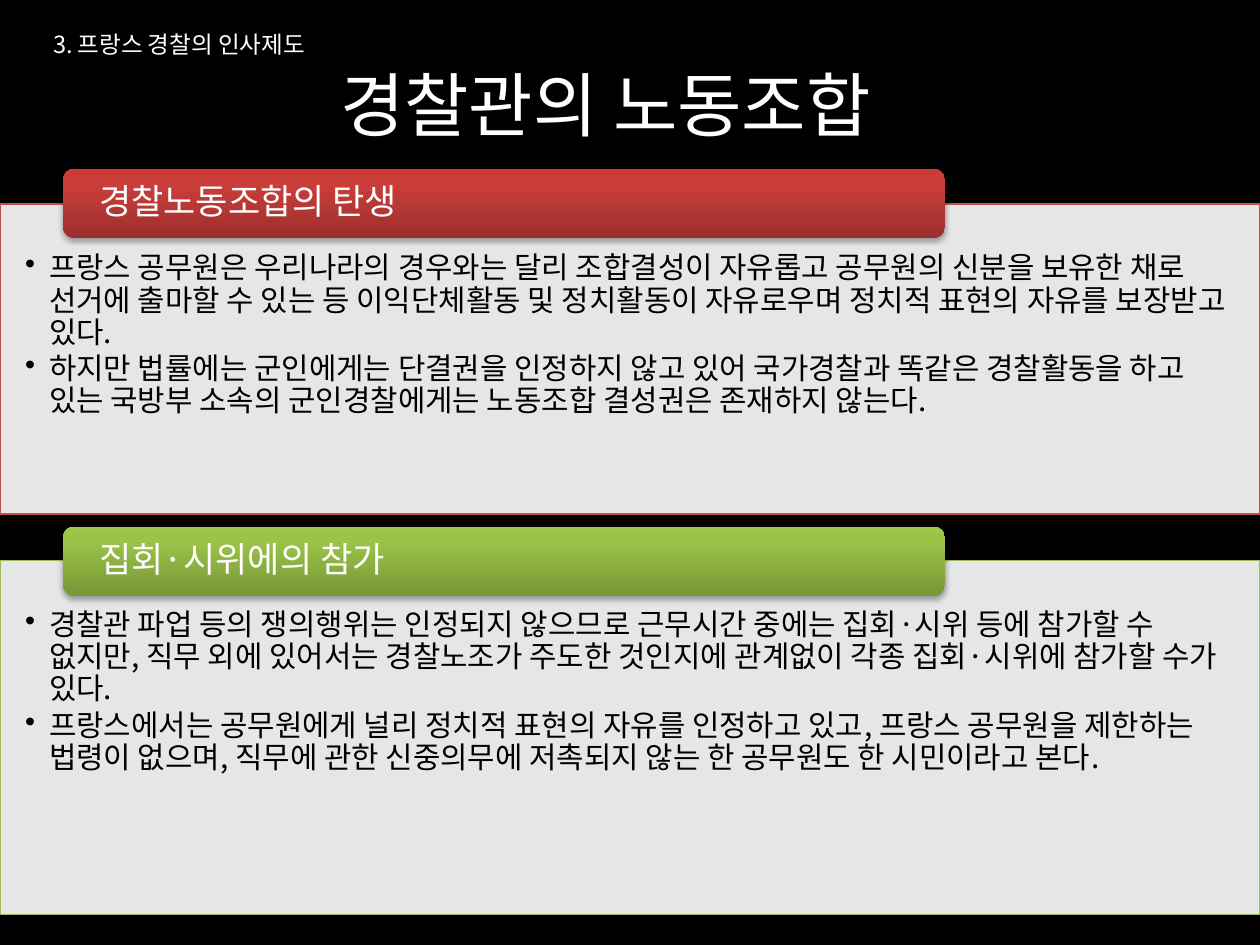
from lxml import etree
from pptx import Presentation
from pptx.dml.color import RGBColor
from pptx.enum.shapes import MSO_SHAPE
from pptx.enum.text import MSO_ANCHOR, PP_ALIGN
from pptx.oxml.ns import qn
from pptx.util import Inches, Pt

RECT, ROUNDED = MSO_SHAPE.RECTANGLE, MSO_SHAPE.ROUNDED_RECTANGLE
TOP, MIDDLE = MSO_ANCHOR.TOP, MSO_ANCHOR.MIDDLE
LEFT, CENTER = PP_ALIGN.LEFT, PP_ALIGN.CENTER
FONT = "Noto Sans CJK KR"
BLACK = RGBColor(0x00, 0x00, 0x00)
WHITE = RGBColor(0xFF, 0xFF, 0xFF)
RED = RGBColor(0xC0, 0x50, 0x4D)
GREEN = RGBColor(0x9B, 0xBB, 0x59)
RED_STOPS = [(0, RGBColor(0x9C, 0x2F, 0x2D)), (80, RGBColor(0xCB, 0x3E, 0x3A)),
             (100, RGBColor(0xCE, 0x3B, 0x37))]
GREEN_STOPS = [(0, RGBColor(0x77, 0x97, 0x37)), (80, RGBColor(0x9B, 0xC3, 0x48)),
               (100, RGBColor(0x9D, 0xC7, 0x46))]


def write(sp, lines, size, color, align, anchor, margins, spacing=0.9, after=0):
    tf = sp.text_frame
    tf.word_wrap = True
    tf.vertical_anchor = anchor
    tf.margin_left = tf.margin_right = Inches(margins[0])
    tf.margin_top, tf.margin_bottom = Inches(margins[1]), Inches(margins[2])
    tf.text = "\n".join(lines)
    for p in tf.paragraphs:
        p.alignment = align
        p.line_spacing = spacing
        p.space_before, p.space_after = Pt(0), Pt(after)
        r = p.runs[0]
        r.font.size, r.font.name = Pt(size), FONT
        r.font.color.rgb = color
        etree.SubElement(r.font._element, qn("a:ea"), typeface=FONT)


def add_shadow(sp):
    sp.shadow.inherit = False
    effects = sp._element.spPr.find(qn("a:effectLst"))
    shadow = etree.SubElement(effects, qn("a:outerShdw"), blurRad="40000", dist="23000",
                              dir="5400000", rotWithShape="0")
    c = etree.SubElement(shadow, qn("a:srgbClr"), val=str(BLACK))
    etree.SubElement(c, qn("a:alpha"), val="35000")


prs = Presentation()
prs.slide_width, prs.slide_height = Inches(10), Inches(7.5)
s = prs.slides.add_slide(prs.slide_layouts[6])
s.background.fill.solid()
s.background.fill.fore_color.rgb = BLACK

# Chapter label and title
chapter = s.shapes.add_textbox(Inches(0.12), Inches(0.21), Inches(2.6), Inches(0.31))
write(chapter, ["3. 프랑스 경찰의 인사제도"], 13.5, WHITE, CENTER, MIDDLE, (0.1, 0.05, 0.05))
title = s.shapes.add_textbox(Inches(0.75), Inches(0.44), Inches(8.11), Inches(0.77))
write(title, ["경찰관의 노동조합"], 40, WHITE, CENTER, TOP, (0.1, 0.05, 0.05), spacing=1)

# Sections: panel top, panel height, header top, colours, heading, bullets
sections = [
    (1.62, 2.46, 1.34, RED, RED_STOPS, "경찰노동조합의 탄생", [
        "프랑스 공무원은 우리나라의 경우와는 달리 조합결성이 자유롭고 공무원의 신분을 보유한 채로 "
        "선거에 출마할 수 있는 등 이익단체활동 및 정치활동이 자유로우며 정치적 표현의 자유를 "
        "보장받고 있다.",
        "하지만 법률에는 군인에게는 단결권을 인정하지 않고 있어 국가경찰과 똑같은 경찰활동을 하고 "
        "있는 국방부 소속의 군인경찰에게는 노동조합 결성권은 존재하지 않는다."]),
    (4.45, 2.81, 4.18, GREEN, GREEN_STOPS, "집회·시위에의 참가", [
        "경찰관 파업 등의 쟁의행위는 인정되지 않으므로 근무시간 중에는 집회·시위 등에 참가할 수 "
        "없지만, 직무 외에 있어서는 경찰노조가 주도한 것인지에 관계없이 각종 집회·시위에 참가할 "
        "수가 있다.",
        "프랑스에서는 공무원에게 널리 정치적 표현의 자유를 인정하고 있고, 프랑스 공무원을 제한하는 "
        "법령이 없으며, 직무에 관한 신중의무에 저촉되지 않는 한 공무원도 한 시민이라고 본다."]),
]

for top, height, header_top, color, stops, heading, bullets in sections:
    # Translucent panel with bullets
    panel = s.shapes.add_shape(RECT, 0, Inches(top), Inches(10), Inches(height))
    panel.fill.solid()
    panel.fill.fore_color.rgb = WHITE
    white = panel._element.spPr.find(qn("a:solidFill"))[0]
    etree.SubElement(white, qn("a:alpha"), val="90000")
    panel.line.color.rgb = color
    panel.line.width = Pt(0.75)
    add_shadow(panel)
    write(panel, bullets, 17, BLACK, LEFT, TOP, (0.2, 0.39, 0.13), after=2.55)
    for p in panel.text_frame.paragraphs:
        p.level = 1
        pPr = p._p.get_or_add_pPr()
        pPr.set("marL", str(Inches(0.19)))
        pPr.set("indent", str(-Inches(0.19)))
        etree.SubElement(pPr, qn("a:buChar"), char="•")

    # Gradient header
    header = s.shapes.add_shape(ROUNDED, Inches(0.5), Inches(header_top), Inches(7), Inches(0.55))
    header.fill.gradient()
    header.fill.gradient_angle = 90
    stop_list = header._element.spPr.find(qn("a:gradFill")).find(qn("a:gsLst"))
    for old in list(stop_list):
        stop_list.remove(old)
    for position, shade in stops:
        gs = etree.SubElement(stop_list, qn("a:gs"), pos=str(position * 1000))
        etree.SubElement(gs, qn("a:srgbClr"), val=str(shade))
    header.line.fill.background()
    add_shadow(header)
    write(header, [heading], 20, WHITE, LEFT, MIDDLE, (0.26, 0, 0), after=7)

prs.save("out.pptx")
